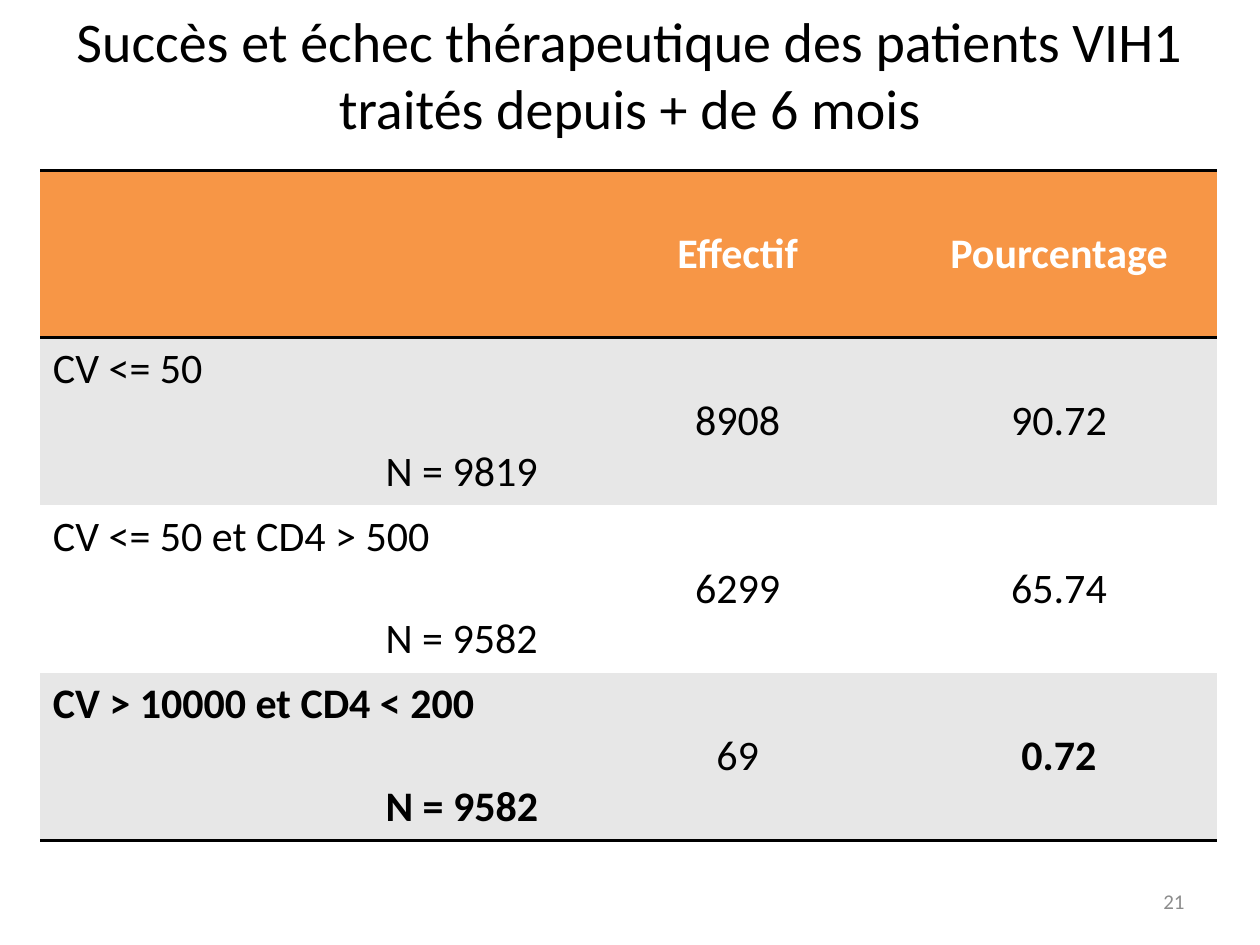
"""Build the slide on treatment success and failure among HIV-1 patients."""
from lxml.etree import SubElement
from pptx import Presentation
from pptx.dml.color import RGBColor
from pptx.enum.text import MSO_ANCHOR, PP_ALIGN
from pptx.oxml.ns import qn
from pptx.util import Inches, Pt

TITLE = "Succès et échec thérapeutique des patients VIH1 traités depuis + de 6 mois"
PAGE = "21"
HEADER = ("", "Effectif", "Pourcentage")
ROWS = [
    (("CV <= 50", "N = 9819"), "8908", "90.72"),
    (("CV <= 50 et CD4 > 500", "N = 9582"), "6299", "65.74"),
    (("CV > 10000 et CD4 < 200", "N = 9582"), "69", "0.72"),
]
BOLD = {(0, 1), (0, 2), (3, 0), (3, 2)}
COLORS = {"text": "000000", "head": "F79646", "head_text": "FFFFFF",
          "band": "E7E7E7", "plain": "FFFFFF", "page": "8C8C8C"}
FONT = "Calibri"
WIDTH, HEIGHT = 10, 7.5
LEFT, TOP, COLS, ROW_H = 0.32, 1.35, (4.24, 2.59, 2.51), 1.33
COUNT_INDENT = 2.64
LINE = Pt(29.3)
NO_STYLE = "{2D5ABB26-0587-4C30-8999-92F81FD0307C}"


def rgb(name):
    return RGBColor.from_string(COLORS[name])


def style(p, size, color, align, bold=False):
    p.alignment = align
    p.font.name, p.font.size, p.font.bold = FONT, Pt(size), bold
    p.font.color.rgb = rgb(color)


def add_text(s, box, text, size, color, align, anchor):
    tf = s.shapes.add_textbox(*map(Inches, box)).text_frame
    tf.word_wrap = True
    tf.vertical_anchor = anchor
    tf.text = text
    style(tf.paragraphs[0], size, color, align)


def add_border(cell, tag, index):
    pr = cell._tc.get_or_add_tcPr()
    ln = SubElement(pr, qn(tag), w=str(Pt(2)))
    fill = SubElement(ln, qn("a:solidFill"))
    SubElement(fill, qn("a:srgbClr"), val=COLORS["text"])
    pr.insert(index, ln)


def fill_cell(cell, content, row, col):
    cell.fill.solid()
    cell.fill.fore_color.rgb = rgb("head" if row == 0 else "band" if row % 2 else "plain")
    label = isinstance(content, tuple)
    tf = cell.text_frame
    tf.text = "\n".join(content) if label else content
    cell.vertical_anchor = MSO_ANCHOR.TOP if label else MSO_ANCHOR.MIDDLE
    for p in tf.paragraphs:
        style(p, 24, "text" if row else "head_text",
              PP_ALIGN.LEFT if label else PP_ALIGN.CENTER, (row, col) in BOLD)
    if label:
        count = tf.paragraphs[1]
        count.space_before = LINE
        count._p.get_or_add_pPr().set("marL", str(Inches(COUNT_INDENT)))
    if row == 0:
        add_border(cell, "a:lnT", 0)
    if row in (0, len(ROWS)):
        add_border(cell, "a:lnB", 0 if row else 1)


def add_results(s):
    data = [HEADER, *ROWS]
    table = s.shapes.add_table(len(data), len(COLS), Inches(LEFT), Inches(TOP),
                               Inches(sum(COLS)), Inches(ROW_H * len(data))).table
    table.first_row = table.horz_banding = False
    table._tbl.tblPr.find(qn("a:tableStyleId")).text = NO_STYLE
    for column, width in zip(table.columns, COLS):
        column.width = Inches(width)
    for r, values in enumerate(data):
        table.rows[r].height = Inches(ROW_H)
        for c, content in enumerate(values):
            fill_cell(table.cell(r, c), content, r, c)


def main():
    prs = Presentation()
    prs.slide_width, prs.slide_height = Inches(WIDTH), Inches(HEIGHT)
    s = prs.slides.add_slide(prs.slide_layouts[6])
    add_text(s, (7.17, 6.95, 2.33, 0.4), PAGE, 12, "page", PP_ALIGN.RIGHT, MSO_ANCHOR.MIDDLE)
    add_text(s, (0, 0, WIDTH, 1.18), TITLE, 32, "text", PP_ALIGN.CENTER, MSO_ANCHOR.TOP)
    add_results(s)
    prs.save("out.pptx")


if __name__ == "__main__":
    main()
